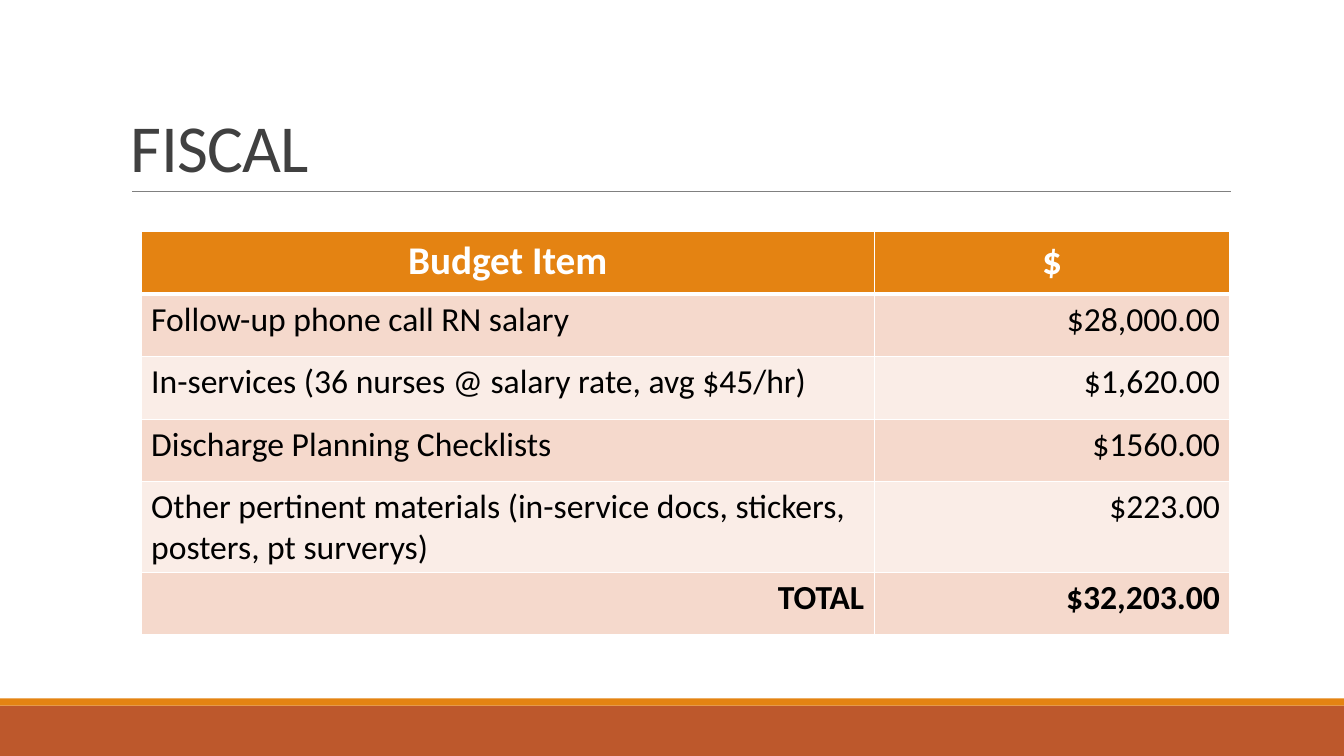
from lxml import etree
from pptx import Presentation, util as u
from pptx.dml.color import RGBColor
from pptx.enum import shapes, text
from pptx.oxml import ns

LEFT, CENTER, RIGHT = text.PP_ALIGN.LEFT, text.PP_ALIGN.CENTER, text.PP_ALIGN.RIGHT


def rgb(color):
    return RGBColor.from_string(color)


def write(tf, content, size=24, color="000000", bold=False, align=LEFT,
          font="Calibri", line_spacing=None, tracking=None):
    p = tf.paragraphs[0]
    p.alignment = align
    if line_spacing:
        p.line_spacing = line_spacing
    r = p.add_run()
    r.text = content
    r.font.name = font
    r.font.size = u.Pt(size)
    r.font.bold = bold
    r.font.color.rgb = rgb(color)
    if tracking:
        r.font._element.set("spc", str(int(tracking * 100)))


class Deck:
    orange, rust = "E48312", "BD582C"
    bands = "F5D9CC", "FAEDE7"
    white, gray, dark = "FFFFFF", "808080", "404040"

    def __init__(self):
        self.prs = Presentation()
        self.prs.slide_width = u.Inches(13.33)
        self.prs.slide_height = u.Inches(7.5)
        self.s = self.prs.slides.add_slide(self.prs.slide_layouts[6])

    def bar(self, top, height, color):
        sp = self.s.shapes.add_shape(shapes.MSO_SHAPE.RECTANGLE, 0, u.Inches(top),
                                     self.prs.slide_width, u.Inches(height))
        sp.shadow.inherit = False
        sp.fill.solid()
        sp.fill.fore_color.rgb = rgb(color)
        sp.line.fill.background()

    def rule(self, left, right, y):
        line = self.s.shapes.add_connector(shapes.MSO_CONNECTOR.STRAIGHT, u.Inches(left),
                                           u.Inches(y), u.Inches(right), u.Inches(y))
        line.line.color.rgb = rgb(self.gray)
        line.line.width = u.Pt(0.5)
        etree.SubElement(line._element.spPr, ns.qn("a:effectLst"))

    def title(self, content, *box):
        tf = self.s.shapes.add_textbox(*map(u.Inches, box)).text_frame
        tf.word_wrap = True
        tf.vertical_anchor = text.MSO_ANCHOR.BOTTOM
        write(tf, content, size=48, color=self.dark, line_spacing=0.85, tracking=-0.5)

    def borders(self, cell, bottom):
        tcPr = cell._tc.get_or_add_tcPr()
        for side, width in (("L", 1), ("R", 1), ("T", 1), ("B", bottom)):
            ln = etree.SubElement(tcPr, ns.qn(f"a:ln{side}"), w=str(u.Pt(width)))
            fill = etree.SubElement(ln, ns.qn("a:solidFill"))
            etree.SubElement(fill, ns.qn("a:srgbClr"), val=self.white)

    def table(self, rows, left, top, widths, row_height):
        tbl = self.s.shapes.add_table(len(rows), len(widths), u.Inches(left), u.Inches(top),
                                      u.Inches(sum(widths)),
                                      u.Inches(row_height * len(rows))).table
        for col, width in zip(tbl.columns, widths):
            col.width = u.Inches(width)
        for i, row in enumerate(rows):
            header, total = i == 0, i == len(rows) - 1
            for j, content in enumerate(row):
                cell = tbl.cell(i, j)
                self.borders(cell, 3 if header else 1)
                cell.fill.solid()
                cell.fill.fore_color.rgb = rgb(self.orange if header else self.bands[(i - 1) % 2])
                if header:
                    write(cell.text_frame, content, size=28, color=self.white,
                          bold=True, align=CENTER)
                else:
                    write(cell.text_frame, content, bold=total,
                          align=RIGHT if total or j else LEFT)


def main():
    budget = [
        ("Budget Item", "$"),
        ("Follow-up phone call RN salary", "$28,000.00"),
        ("In-services (36 nurses @ salary rate, avg $45/hr)", "$1,620.00"),
        ("Discharge Planning Checklists", "$1560.00"),
        ("Other pertinent materials (in-service docs, stickers, posters, pt surverys)",
         "$223.00"),
        ("TOTAL", "$32,203.00"),
    ]
    deck = Deck()
    deck.bar(7, 0.5, deck.rust)
    deck.bar(6.93, 0.07, deck.orange)
    deck.rule(1.31, 12.21, 1.9)
    deck.title("FISCAL", 1.2, 0.31, 11, 1.59)
    deck.table(budget, 1.4, 2.3, (7.27, 3.53), 0.62)
    deck.prs.save("out.pptx")


if __name__ == "__main__":
    main()
